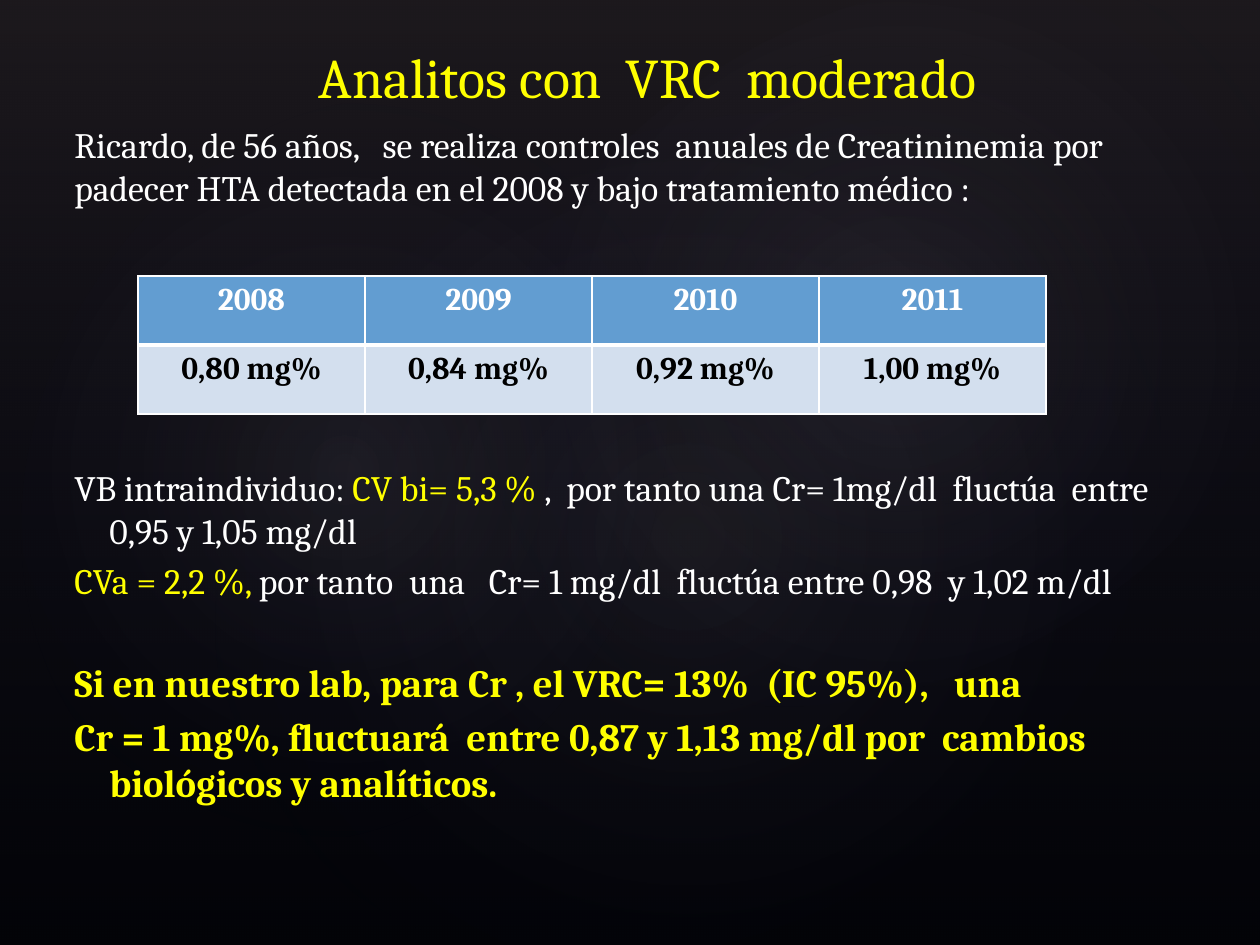
from lxml import etree
from pptx import Presentation
from pptx.dml.color import RGBColor
from pptx.enum.shapes import MSO_SHAPE
from pptx.enum.text import MSO_ANCHOR, PP_ALIGN
from pptx.oxml import parse_xml
from pptx.oxml.ns import qn
from pptx.util import Pt

RECT, OVAL = MSO_SHAPE.RECTANGLE, MSO_SHAPE.OVAL
CENTER, BOTTOM = PP_ALIGN.CENTER, MSO_ANCHOR.BOTTOM
PX = 914400 / 126
FONT = "Cambria"
NS = 'xmlns:a="http://schemas.openxmlformats.org/drawingml/2006/main"'
HEX = {"black": "000000", "white": "FFFFFF", "yellow": "FFFF00",
       "navy": "242852", "plum": "504652", "mist": "C4BCC6",
       "head": "629DD1", "cell": "D3DFEE"}


def px(*nums):
    return [round(n * PX) for n in nums]


def style(run, size, color, bold=False):
    run.font.name = FONT
    run.font.size = Pt(size)
    run.font.bold = bold
    run.font.color.rgb = RGBColor.from_string(HEX[color])


deck = Presentation()
deck.slide_width, deck.slide_height = px(1260, 945)
slide = deck.slides.add_slide(deck.slide_layouts[6])
shapes = slide.shapes
back = slide.background.fill
back.solid()
back.fore_color.rgb = RGBColor.from_string(HEX["black"])

# Translucent veil and three soft glows: kind, box, turn, stops (position, colour, opacity)
DOWN = '<a:lin ang="5400000" scaled="0"/>'
ROUND = ('<a:path path="circle"><a:fillToRect l="50000" t="50000" '
         'r="50000" b="50000"/></a:path>')
layers = [
    (RECT, (0, 0, 1260, 945), 0, [(0, "plum", 36), (100, "navy", 10)]),
    (OVAL, (189, 144, 998, 786), 328.7, [(0, "mist", 7), (58, "navy", 0)]),
    (OVAL, (-38, 161, 764, 617), 294.3, [(0, "mist", 8), (58, "navy", 0)]),
    (OVAL, (451, 16, 893, 655), 328.7, [(0, "mist", 8), (58, "navy", 0)]),
]
for kind, box, turn, stops in layers:
    layer = shapes.add_shape(kind, *px(*box))
    layer.rotation = turn
    layer.shadow.inherit = False
    layer.line.fill.background()
    marks = "".join(
        f'<a:gs pos="{pos * 1000}"><a:srgbClr val="{HEX[color]}">'
        f'<a:alpha val="{alpha * 1000}"/></a:srgbClr></a:gs>'
        for pos, color, alpha in stops)
    way = DOWN if kind == RECT else ROUND
    grad = parse_xml(f'<a:gradFill {NS} rotWithShape="1">'
                     f'<a:gsLst>{marks}</a:gsLst>{way}</a:gradFill>')
    layer._element.spPr.find(qn("a:prstGeom")).addnext(grad)

# Body: space before, left indent, first-line indent, size, bold, runs
body = shapes.add_textbox(*px(59, 123, 1157, 690)).text_frame
body.word_wrap = True
body.margin_top = body.margin_bottom = 0
paras = [
    (0, 3, 0, 20.4, False, [
        ("Ricardo, de 56 años,   se realiza controles  anuales de Creatininemia "
         "por padecer HTA detectada en el 2008 y bajo tratamiento médico :", "white")]),
    (147, 38, -35, 20.4, False, [
        ("VB intraindividuo: ", "white"), ("CV bi= 5,3 %", "yellow"),
        (" ,  por tanto una Cr= 1mg/dl  fluctúa  entre  0,95 y 1,05 mg/dl", "white")]),
    (4, 38, -35, 20.4, False, [
        ("CVa = 2,2 %, ", "yellow"),
        ("por tanto  una   Cr= 1 mg/dl  fluctúa entre 0,98  y 1,02 m/dl", "white")]),
    (33, 38, -35, 22.1, True, [
        ("Si en nuestro lab, para Cr , el VRC= 13%  (IC 95%),   una", "yellow")]),
    (4, 38, -35, 22.1, True, [
        ("Cr = 1 mg%, fluctuará  entre 0,87 y 1,13 mg/dl por  cambios  "
         "biológicos y analíticos.", "yellow")]),
]
for i, (gap, left, first, size, bold, parts) in enumerate(paras):
    para = body.add_paragraph() if i else body.paragraphs[0]
    para.space_before = Pt(gap)
    props = para._p.get_or_add_pPr()
    props.set("marL", str(px(left)[0]))
    props.set("indent", str(px(first)[0]))
    for text, color in parts:
        run = para.add_run()
        run.text = text
        style(run, size, color, bold)

title = shapes.add_textbox(*px(144, 37, 1008, 79)).text_frame
title.word_wrap = True
title.vertical_anchor = BOTTOM
title.text = "Analitos con  VRC  moderado"
title.paragraphs[0].alignment = CENTER
style(title.paragraphs[0].runs[0], 32, "yellow")

# Yearly creatinine results
rows = [
    (["2008", "2009", "2010", "2011"], "head", "white"),
    (["0,80 mg%", "0,84 mg%", "0,92 mg%", "1,00 mg%"], "cell", "black"),
]
table = shapes.add_table(2, 4, *px(138, 276, 908, 138)).table
for r, (texts, fill, ink) in enumerate(rows):
    for c, text in enumerate(texts):
        cell = table.cell(r, c)
        cell.text = text
        para = cell.text_frame.paragraphs[0]
        para.alignment = CENTER
        style(para.runs[0], 18, ink, True)
        cell.fill.solid()
        cell.fill.fore_color.rgb = RGBColor.from_string(HEX[fill])
        props = cell._tc.get_or_add_tcPr()
        for n, side in enumerate(("lnL", "lnR", "lnT", "lnB")):
            thick = (r, side) in ((0, "lnB"), (1, "lnT"))
            line = etree.Element(qn(f"a:{side}"), w=str(Pt(3 if thick else 1)))
            solid = etree.SubElement(line, qn("a:solidFill"))
            etree.SubElement(solid, qn("a:srgbClr"), val=HEX["white"])
            props.insert(n, line)

deck.save("out.pptx")
